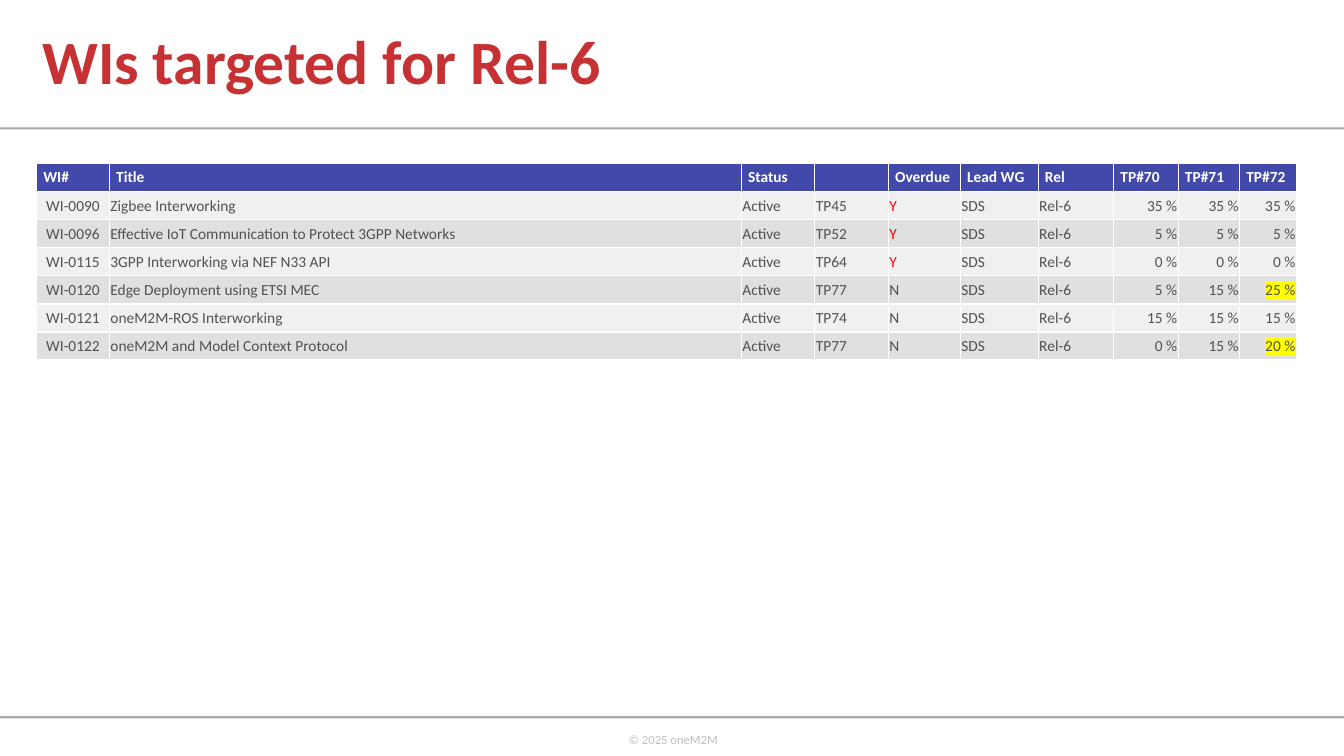
from lxml import etree
from pptx import Presentation
from pptx.dml.color import RGBColor
from pptx.enum import shapes, text
from pptx.oxml import ns
from pptx.util import Pt

WHITE = RGBColor(0xFF, 0xFF, 0xFF)
RULE_GREY = RGBColor(0xA7, 0xA9, 0xAC)
FOOTER_GREY = RGBColor(0xBF, 0xBF, 0xBF)
TITLE_RED = RGBColor(0xC6, 0x31, 0x33)
HEADER_BLUE = RGBColor(0x43, 0x49, 0xAA)
BODY_GREY = RGBColor(0x54, 0x50, 0x54)
OVERDUE_RED = RGBColor(0xFF, 0x00, 0x00)
HIGHLIGHT = RGBColor(0xFF, 0xFF, 0x00)
BANDS = (RGBColor(0xF0, 0xF0, 0xF0), RGBColor(0xE0, 0xE0, 0xE0))

LEFT, CENTER, RIGHT = (text.PP_ALIGN.LEFT, text.PP_ALIGN.CENTER,
                       text.PP_ALIGN.RIGHT)
MIDDLE = text.MSO_ANCHOR.MIDDLE

HEADER = ["WI#", "Title", "Status", "", "Overdue", "Lead WG", "Rel",
          "TP#70", "TP#71", "TP#72"]
COL_WIDTHS = [52.1, 451.4, 52.5, 52.5, 51.4, 55.7, 53.9, 46.1, 43.9, 40.5]
COL_ALIGN = [CENTER] + [LEFT] * 6 + [RIGHT] * 3
ROW_HEIGHT = 20.06
# number, title, target meeting, overdue, progress in percent at each meeting
WORK_ITEMS = [
    ("WI-0090", "Zigbee Interworking", "TP45", "Y", (35, 35, 35)),
    ("WI-0096", "Effective IoT Communication to Protect 3GPP Networks",
     "TP52", "Y", (5, 5, 5)),
    ("WI-0115", "3GPP Interworking via NEF N33 API", "TP64", "Y", (0, 0, 0)),
    ("WI-0120", "Edge Deployment using ETSI MEC", "TP77", "N", (5, 15, 25)),
    ("WI-0121", "oneM2M-ROS Interworking", "TP74", "N", (15, 15, 15)),
    ("WI-0122", "oneM2M and Model Context Protocol", "TP77", "N", (0, 15, 20)),
]


def set_all(target, values):
    for name, value in values.items():
        setattr(target, name, value)


class Deck:
    font = "Calibri"

    def __init__(self, width, height):
        self.prs = Presentation()
        set_all(self.prs, {"slide_width": Pt(width), "slide_height": Pt(height)})
        self.s = self.prs.slides.add_slide(self.prs.slide_layouts[6])

    def rule(self, y):
        """Draw a thin grey bar across the whole slide."""
        sp = self.s.shapes.add_shape(shapes.MSO_SHAPE.RECTANGLE, 0, Pt(y),
                                     self.prs.slide_width, Pt(1.5))
        sp.shadow.inherit = False
        sp.fill.solid()
        sp.fill.fore_color.rgb = RULE_GREY
        sp.line.fill.background()

    def fill_paragraph(self, p, words, size, color, bold=False, align=LEFT,
                       mark=None):
        p.alignment = align
        if not words:
            etree.SubElement(p._p, ns.qn("a:endParaRPr"), sz=str(size * 100))
            return
        r = p.add_run()
        r.text = words
        set_all(r.font, {"name": self.font, "size": Pt(size), "bold": bold})
        r.font.color.rgb = color
        if mark:
            hl = etree.Element(ns.qn("a:highlight"))
            etree.SubElement(hl, ns.qn("a:srgbClr"), val=str(mark))
            r._r.rPr.find(ns.qn("a:solidFill")).addnext(hl)

    def label(self, box, words, size, color, wrap=True, spacing=1.0, **style):
        tf = self.s.shapes.add_textbox(*map(Pt, box)).text_frame
        margins = dict.fromkeys(["margin_left", "margin_top", "margin_right",
                                 "margin_bottom"], Pt(3.6))
        set_all(tf, {**margins, "word_wrap": wrap, "vertical_anchor": MIDDLE})
        p = tf.paragraphs[0]
        p.line_spacing = spacing
        self.fill_paragraph(p, words, size, color, **style)

    def table(self, x, y, widths, n_rows):
        """Add an empty grid and return its table."""
        tbl = self.s.shapes.add_table(n_rows, len(widths), Pt(x), Pt(y),
                                      Pt(sum(widths)),
                                      Pt(n_rows * ROW_HEIGHT)).table
        set_all(tbl, {"first_row": False, "horz_banding": False})
        for col, width in zip(tbl.columns, widths):
            col.width = Pt(width)
        for row in tbl.rows:
            row.height = Pt(ROW_HEIGHT)
        return tbl

    def cell(self, cell, words, fill, color, side=0.7, top=0.7, **style):
        set_all(cell, {"margin_left": Pt(side), "margin_right": Pt(side),
                       "margin_top": Pt(top), "margin_bottom": 0,
                       "vertical_anchor": MIDDLE})
        cell.fill.solid()
        cell.fill.fore_color.rgb = fill
        for i, edge in enumerate(("lnL", "lnR", "lnT", "lnB")):
            ln = etree.Element(ns.qn("a:" + edge), w=str(Pt(1)))
            solid = etree.SubElement(ln, ns.qn("a:solidFill"))
            etree.SubElement(solid, ns.qn("a:srgbClr"), val=str(WHITE))
            cell._tc.tcPr.insert(i, ln)
        self.fill_paragraph(cell.text_frame.paragraphs[0], words, 11, color,
                            **style)


def main():
    deck = Deck(960, 540)
    for y in (90.9, 511.6):
        deck.rule(y)
    deck.label((444.2, 519.1, 73.4, 18), "© 2025 oneM2M", 9, FOOTER_GREY,
               wrap=False, align=CENTER)
    deck.label((26.6, 0, 618.5, 92.2), "WIs targeted for Rel-6", 44, TITLE_RED,
               spacing=0.9, bold=True)

    tbl = deck.table(26.1, 116.9, COL_WIDTHS, len(WORK_ITEMS) + 1)
    for c, words in enumerate(HEADER):
        deck.cell(tbl.cell(0, c), words, HEADER_BLUE, WHITE, side=4.8, top=0,
                  bold=True)
    for i, (number, title, target, overdue, progress) in enumerate(WORK_ITEMS):
        values = [number, title, "Active", target, overdue, "SDS", "Rel-6"]
        values += [f"{percent} %" for percent in progress]
        advanced = progress[-1] > progress[-2]
        for c, words in enumerate(values):
            last = c == len(values) - 1
            deck.cell(tbl.cell(i + 1, c), words, BANDS[i % 2],
                      OVERDUE_RED if words == "Y" else BODY_GREY,
                      align=COL_ALIGN[c],
                      mark=HIGHLIGHT if last and advanced else None)
    deck.prs.save("out.pptx")


if __name__ == "__main__":
    main()
